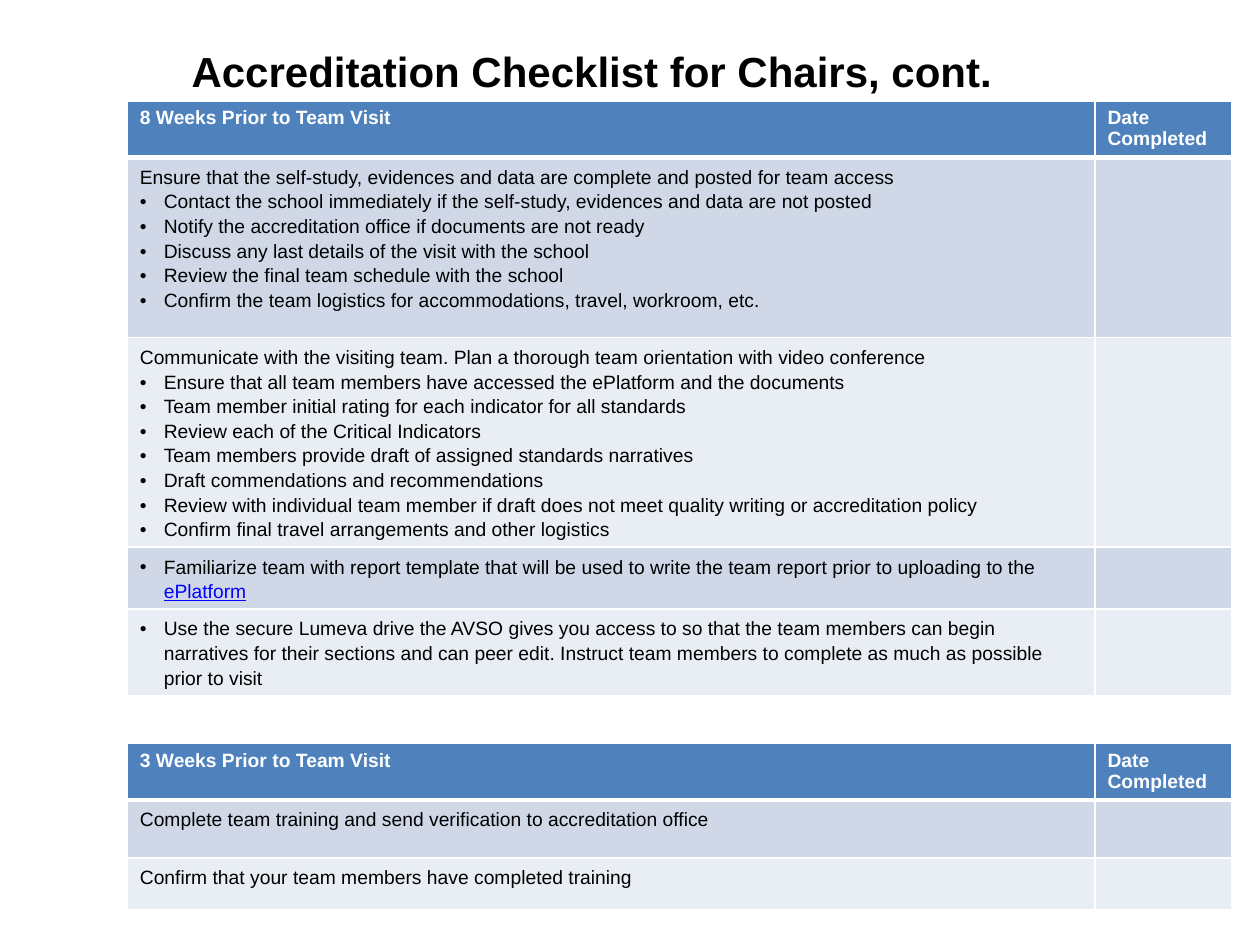
import pptx
import pptx.util
import pptx.dml.color
import pptx.enum.text
import pptx.oxml
import pptx.oxml.ns

COLORS = {
    "header": "4F81BD",
    "dark band": "D0D8E8",
    "light band": "E9EDF4",
    "border": "FFFFFF",
    "header text": "FFFFFF",
    "body text": "000000",
    "link": "0000FF",
}

CHECKLISTS = [
    {
        "top": 0.8,
        "heights": [0.45, 1.43, 1.66, 0.49, 0.49],
        "heading": "8 Weeks Prior to Team Visit",
        "tasks": [
            [
                "Ensure that the self-study, evidences and data are complete and posted for team access",
                "• Contact the school immediately if the self-study, evidences and data are not posted",
                "• Notify the accreditation office if documents are not ready",
                "• Discuss any last details of the visit with the school",
                "• Review the final team schedule with the school",
                "• Confirm the team logistics for accommodations, travel, workroom, etc.",
            ],
            [
                "Communicate with the visiting team. Plan a thorough team orientation with video conference",
                "• Ensure that all team members have accessed the ePlatform and the documents",
                "• Team member initial rating for each indicator for all standards",
                "• Review each of the Critical Indicators",
                "• Team members provide draft of assigned standards narratives",
                "• Draft commendations and recommendations",
                "• Review with individual team member if draft does not meet quality writing or accreditation policy",
                "• Confirm final travel arrangements and other logistics",
            ],
            ["• Familiarize team with report template that will be used to write the team report prior to uploading to the |ePlatform"],
            ["• Use the secure Lumeva drive the AVSO gives you access to so that the team members can begin narratives for their sections and can peer edit. Instruct team members to complete as much as possible prior to visit"],
        ],
    },
    {
        "top": 5.9,
        "heights": [0.45, 0.46, 0.41],
        "heading": "3 Weeks Prior to Team Visit",
        "tasks": [
            ["Complete team training and send verification to accreditation office"],
            ["Confirm that your team members have completed training"],
        ],
    },
]


def add_text(paragraph, text, color, **formats):
    run = paragraph.add_run()
    run.text = text
    values = {"name": "Arial", "size": pptx.util.Pt(11), "bold": False, **formats}
    for attribute, value in values.items():
        setattr(run.font, attribute, value)
    run.font.color.rgb = pptx.dml.color.RGBColor.from_string(COLORS[color])


def paint_cell(cell, color, bottom_width):
    cell.fill.solid()
    cell.fill.fore_color.rgb = pptx.dml.color.RGBColor.from_string(COLORS[color])
    properties = cell._tc.get_or_add_tcPr()
    for position, (side, width) in enumerate({"L": 1, "R": 1, "T": 1, "B": bottom_width}.items()):
        properties.insert(position, pptx.oxml.parse_xml(
            f'<a:ln{side} {pptx.oxml.ns.nsdecls("a")} w="{pptx.util.Pt(width)}">'
            f'<a:solidFill><a:srgbClr val="{COLORS["border"]}"/></a:solidFill></a:ln{side}>'))


presentation = pptx.Presentation()
presentation.slide_width = pptx.util.Inches(10)
presentation.slide_height = pptx.util.Inches(7.5)
slide = presentation.slides.add_slide(presentation.slide_layouts[5])

heading = slide.shapes.title
for attribute, inches in {"left": 1.42, "top": 0.27, "width": 8.08, "height": 0.68}.items():
    setattr(heading, attribute, pptx.util.Inches(inches))
heading_format = {
    "vertical_anchor": pptx.enum.text.MSO_ANCHOR.TOP,
    "margin_top": pptx.util.Inches(0.09),
    "word_wrap": True,
    "auto_size": pptx.enum.text.MSO_AUTO_SIZE.NONE,
}
for attribute, value in heading_format.items():
    setattr(heading.text_frame, attribute, value)
heading_line = heading.text_frame.paragraphs[0]
heading_line.alignment = pptx.enum.text.PP_ALIGN.LEFT
add_text(heading_line, "Accreditation Checklist for Chairs, cont.", "body text",
         size=pptx.util.Pt(24), bold=True)

column_widths = [7.68, 1.09]
hanging = pptx.util.Inches(0.19)

for checklist in CHECKLISTS:
    heights = checklist["heights"]
    table = slide.shapes.add_table(
        len(heights), len(column_widths),
        pptx.util.Inches(1.01), pptx.util.Inches(checklist["top"]),
        pptx.util.Inches(sum(column_widths)), pptx.util.Inches(sum(heights))).table
    table.horz_banding = False
    for column, width in zip(table.columns, column_widths):
        column.width = pptx.util.Inches(width)
    for row, height in zip(table.rows, heights):
        row.height = pptx.util.Inches(height)

    for cell, label in zip(table.rows[0].cells, [checklist["heading"], "Date Completed"]):
        paint_cell(cell, "header", 3)
        add_text(cell.text_frame.paragraphs[0], label, "header text", bold=True)

    for number, lines in enumerate(checklist["tasks"], start=1):
        task, date = table.rows[number].cells
        for cell in (task, date):
            paint_cell(cell, "dark band" if number % 2 else "light band", 1)
        for index, line in enumerate(lines):
            paragraph = task.text_frame.add_paragraph() if index else task.text_frame.paragraphs[0]
            paragraph.line_spacing = 1.15
            if line.startswith("• "):
                indents = paragraph._p.get_or_add_pPr()
                indents.set("marL", str(hanging))
                indents.set("indent", str(-hanging))
                for bullet in ('buFont {} typeface="Arial"', 'buChar {} char="•"'):
                    indents.append(pptx.oxml.parse_xml(
                        f'<a:{bullet.format(pptx.oxml.ns.nsdecls("a"))}/>'))
            wording, _, link = line.removeprefix("• ").partition("|")
            add_text(paragraph, wording, "body text")
            if link:
                add_text(paragraph, link, "link", underline=True)

presentation.save("out.pptx")
